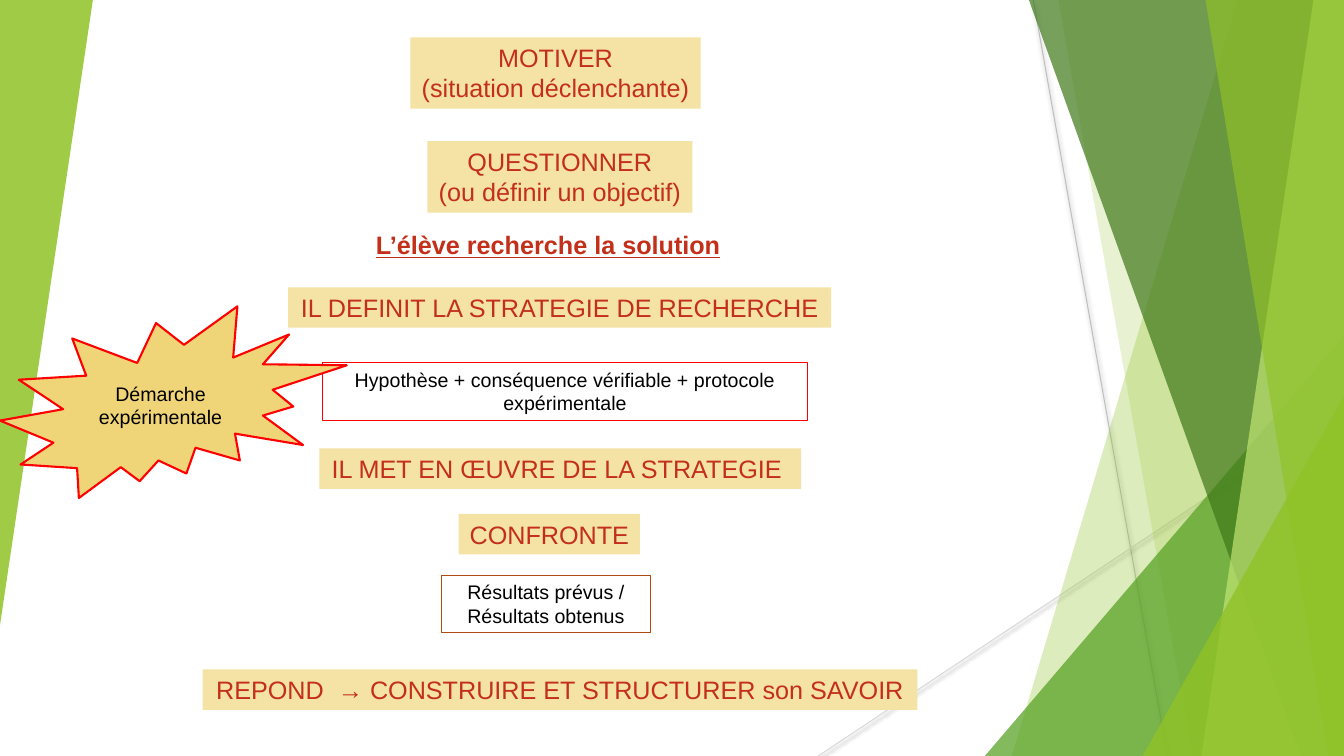
from lxml.etree import SubElement
from pptx import Presentation
from pptx.dml.color import RGBColor
from pptx.enum.shapes import MSO_CONNECTOR, MSO_SHAPE
from pptx.enum.text import MSO_ANCHOR, MSO_AUTO_SIZE, PP_ALIGN
from pptx.oxml.ns import qn
from pptx.util import Cm, Pt

WIDTH, HEIGHT = 33.87, 19.05
FONT = "Arial"
COLORS = {
    "sand": "F5E3A5", "gold": "F0D578", "brick": "C42F1A", "red": "FF0000",
    "rust": "AD4C12", "black": "000000", "lime": "90C226", "green": "54A021",
    "forest": "3F7819", "pale": "C0E474", "gray": "BFBFBF", "silver": "D9D9D9",
}

HEADING = "L’élève recherche la solution"
HEADING_AREA = (9.22, 5.66, 9.27, 1.02)
STEPS = [
    (["MOTIVER", "(situation déclenchante)"], (10.34, 0.94, 7.32, 1.8)),
    (["QUESTIONNER", "(ou définir un objectif)"], (10.77, 3.56, 6.68, 1.8)),
    (["IL DEFINIT LA STRATEGIE DE RECHERCHE"], (7.26, 7.24, 13.69, 1.02)),
    (["IL MET EN ŒUVRE DE LA STRATEGIE "], (8.05, 11.3, 12.14, 1.02)),
    (["CONFRONTE"], (11.56, 12.95, 4.57, 1.02)),
    (["REPOND  → CONSTRUIRE ET STRUCTURER son SAVOIR"], (5.11, 16.87, 18.01, 1.02)),
]
DETAILS = [
    (["Hypothèse + conséquence vérifiable + protocole expérimentale"],
     (8.13, 9.14, 12.22, 1.45), "red"),
    (["Résultats prévus /", "Résultats obtenus"], (11.13, 14.5, 5.26, 1.45), "rust"),
]
METHOD = (["Démarche expérimentale"], (0, 7.72, 8.74, 4.83))

RAYS = [
    ((26.04, 0), (29.42, HEIGHT), "gray"),
    ((WIDTH, 10.24), (20.62, HEIGHT), "silver"),
]
FACETS = [
    ("band", (31.19, 25.5), "lime", 30),
    ("band", (26.67, 30.05), "lime", 20),
    ("triangle", (24.82, 8.46, 9.05, 10.59), "green", 72),
    ("band", (25.93, 32.79), "forest", 70),
    ("band", (33.1, 30.28), "pale", 70),
    ("band", (30.38, 33.48), "lime", 65),
    ("triangle", (28.8, 9.98, 5.07, 9.07), "lime", 80),
    ("triangle", (0, 0, 2.34, 15.75), "lime", 85),
]


def color(name):
    return RGBColor.from_string(COLORS[name])


def paint(shape, fill=None, line=None, width=0.75, opacity=100):
    shape.shadow.inherit = False
    if fill:
        shape.fill.solid()
        shape.fill.fore_color.rgb = color(fill)
        if opacity < 100:
            tint = shape.fill._xPr.find(qn("a:solidFill"))[0]
            SubElement(tint, qn("a:alpha"), val=str(opacity * 1000))
    else:
        shape.fill.background()
    if line:
        shape.line.color.rgb = color(line)
        shape.line.width = Pt(width)
    else:
        shape.line.fill.background()


def write(shape, lines, size, ink, align=PP_ALIGN.CENTER, anchor=MSO_ANCHOR.TOP,
          wrap=True, strong=False):
    frame = shape.text_frame
    frame.word_wrap = wrap
    frame.auto_size = MSO_AUTO_SIZE.NONE
    frame.vertical_anchor = anchor
    for index, line in enumerate(lines):
        para = frame.paragraphs[0] if index == 0 else frame.add_paragraph()
        para.alignment = align
        span = para.add_run()
        span.text = line
        span.font.name = FONT
        span.font.size = Pt(size)
        span.font.color.rgb = color(ink)
        if strong:
            span.font.bold = True
            span.font.underline = True


def add_box(page, kind, area):
    return page.shapes.add_shape(kind, *map(Cm, area))


def add_ray(page, start, end, ink):
    ray = page.shapes.add_connector(MSO_CONNECTOR.STRAIGHT, *map(Cm, start + end))
    ray.line.color.rgb = color(ink)
    ray.line.width = Pt(0.75)
    effects = SubElement(ray._element.spPr, qn("a:effectLst"))
    shadow = SubElement(effects, qn("a:outerShdw"), blurRad=str(Pt(3.1)),
                        dist=str(Pt(1.6)), dir="5400000", rotWithShape="0")
    shade = SubElement(shadow, qn("a:srgbClr"), val=COLORS["black"])
    SubElement(shade, qn("a:alpha"), val="38000")


def add_facet(page, kind, geometry, fill, opacity):
    if kind == "band":
        top, bottom = geometry
        outline = page.shapes.build_freeform(Cm(top), 0)
        corners = [(WIDTH, 0), (WIDTH, HEIGHT), (bottom, HEIGHT)]
        outline.add_line_segments([(Cm(x), Cm(y)) for x, y in corners], close=True)
        facet = outline.convert_to_shape()
    else:
        facet = add_box(page, MSO_SHAPE.ISOSCELES_TRIANGLE, geometry)
        facet.adjustments[0] = 1
        if geometry[0] == 0:
            facet.rotation = 180
    paint(facet, fill, opacity=opacity)


def main():
    deck = Presentation()
    deck.slide_width, deck.slide_height = Cm(WIDTH), Cm(HEIGHT)
    page = deck.slides.add_slide(deck.slide_layouts[5])

    for ray in RAYS:
        add_ray(page, *ray)
    for facet in FACETS:
        add_facet(page, *facet)

    for lines, area in STEPS:
        box = add_box(page, MSO_SHAPE.RECTANGLE, area)
        paint(box, "sand")
        write(box, lines, 18, "brick", wrap=False)
    for lines, area, border in DETAILS:
        box = add_box(page, MSO_SHAPE.RECTANGLE, area)
        paint(box, line=border)
        write(box, lines, 14, "black")

    lines, area = METHOD
    burst = add_box(page, MSO_SHAPE.EXPLOSION2, area)
    paint(burst, "gold", "red", 1.5)
    write(burst, lines, 14, "black", anchor=MSO_ANCHOR.MIDDLE)

    title = page.shapes.title
    title.left, title.top, title.width, title.height = map(Cm, HEADING_AREA)
    write(title, [HEADING], 18, "brick", PP_ALIGN.LEFT, wrap=False, strong=True)

    deck.save("out.pptx")


if __name__ == "__main__":
    main()
